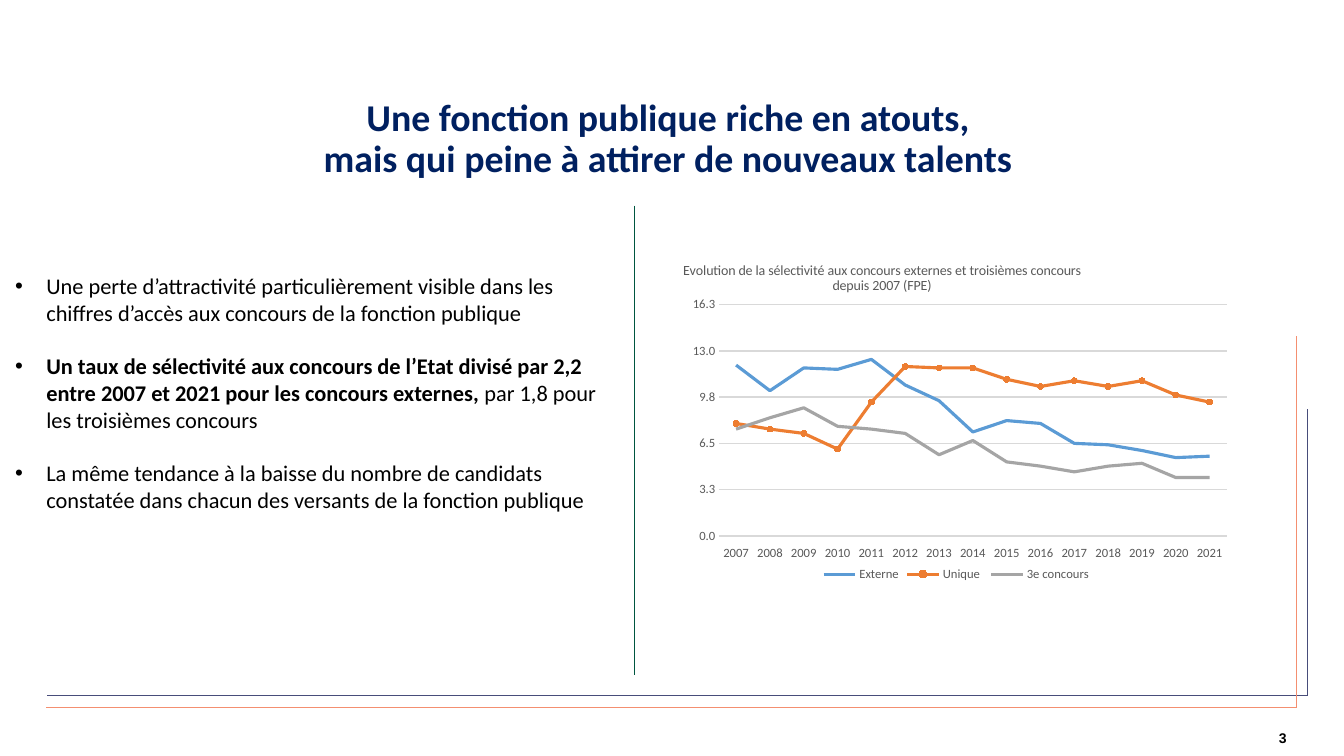
from lxml import etree
from pptx import Presentation
from pptx import util as u
from pptx.chart import data as chart_data
from pptx.dml.color import RGBColor
from pptx.enum import chart as ch
from pptx.enum import shapes, text
from pptx.oxml import ns

NAVY = RGBColor(0x00, 0x20, 0x60)
BLACK = RGBColor(0x00, 0x00, 0x00)
FRAME_BLUE = RGBColor(0x48, 0x4D, 0x7A)
FRAME_CORAL = RGBColor(0xF4, 0x8F, 0x70)
DIVIDER = RGBColor(0x00, 0x56, 0x40)
LABEL_GREY = RGBColor(0x59, 0x59, 0x59)
GRID_GREY = RGBColor(0xD9, 0xD9, 0xD9)
BLUE = RGBColor(0x5B, 0x9B, 0xD5)
ORANGE = RGBColor(0xED, 0x7D, 0x31)
GREY = RGBColor(0xA5, 0xA5, 0xA5)

HEADING = {"name": "Calibri", "size": 27, "bold": True, "color": NAVY}
BODY = {"name": "Calibri", "size": 16, "bold": False, "color": BLACK}
STRONG = {**BODY, "bold": True}
PAGE = {"name": "Arial", "size": 10, "bold": True, "color": BLACK}
CHART_HEADING = {"name": "Calibri", "size": 10, "bold": False, "color": LABEL_GREY}
CHART_LABEL = {**CHART_HEADING, "size": 9}

SELECTIVITY = [
    ("Externe", BLUE,
     [12, 10.2, 11.8, 11.7, 12.4, 10.6, 9.5, 7.3, 8.1, 7.9, 6.5, 6.4, 6, 5.5, 5.6]),
    ("Unique ", ORANGE,
     [7.9, 7.5, 7.2, 6.1, 9.4, 11.9, 11.8, 11.8, 11, 10.5, 10.9, 10.5, 10.9, 9.9, 9.4]),
    ("3e concours", GREY,
     [7.5, 8.3, 9, 7.7, 7.5, 7.2, 5.7, 6.7, 5.2, 4.9, 4.5, 4.9, 5.1, 4.1, 4.1]),
]


class Deck:
    PX = u.Inches(1) // 100

    def __init__(self, width, height):
        self.deck = Presentation()
        self.deck.slide_width, self.deck.slide_height = self.emu(width, height)
        self.slide = self.deck.slides.add_slide(self.deck.slide_layouts[6])

    def emu(self, *lengths):
        return [u.Emu(length * self.PX) for length in lengths]

    def style(self, font, values):
        for key, value in values.items():
            if key == "color":
                font.color.rgb = value
            else:
                setattr(font, key, u.Pt(value) if key == "size" else value)

    def stroke(self, line, color, width):
        line.color.rgb = color
        line.width = u.Pt(width)

    def line(self, start, end, color, width=1):
        rule = self.slide.shapes.add_connector(
            shapes.MSO_CONNECTOR.STRAIGHT, *self.emu(*start, *end))
        self.stroke(rule.line, color, width)
        properties = rule._element.spPr
        etree.SubElement(properties, ns.qn("a:effectLst"))

    def text(self, box, paragraphs, align, anchor, inset=5, spacing=1.0,
             gap=0, bullet_indent=0):
        frame = self.slide.shapes.add_textbox(*self.emu(*box)).text_frame
        margins = {f"margin_{side}": self.emu(inset)[0]
                   for side in ("left", "top", "right", "bottom")}
        settings = {"word_wrap": True, "vertical_anchor": anchor, **margins}
        for key, value in settings.items():
            setattr(frame, key, value)
        for index, runs in enumerate(paragraphs):
            paragraph = frame.add_paragraph() if index else frame.paragraphs[0]
            if bullet_indent:
                self.bullet(paragraph, bullet_indent)
            paragraph.alignment = align
            paragraph.line_spacing = spacing
            if index and gap:
                paragraph.space_before = u.Pt(gap)
            for wording, values in runs:
                run = paragraph.add_run()
                run.text = wording
                self.style(run.font, values)

    def bullet(self, paragraph, indent):
        properties = paragraph._p.get_or_add_pPr()
        hanging = self.emu(indent)[0]
        properties.set("marL", str(hanging))
        properties.set("indent", str(-hanging))
        etree.SubElement(properties, ns.qn("a:buFont"), typeface="Arial")
        etree.SubElement(properties, ns.qn("a:buChar"), char="•")

    def place(self, element, index, **values):
        for former in element.findall(ns.qn("c:layout")):
            element.remove(former)
        layout = etree.Element(ns.qn("c:layout"))
        manual = etree.SubElement(layout, ns.qn("c:manualLayout"))
        for key, value in values.items():
            etree.SubElement(manual, ns.qn(f"c:{key}"), val=str(value))
        element.insert(index, layout)

    def line_chart(self, box, heading, categories, series, top, step):
        data = chart_data.CategoryChartData(number_format="#,##0.0")
        data.categories = categories
        for name, _, values in series:
            data.add_series(name, values)
        chart = self.slide.shapes.add_chart(
            ch.XL_CHART_TYPE.LINE_MARKERS, *self.emu(*box), data).chart
        self.style(chart.font, CHART_LABEL)
        self.chart_heading(chart, heading)
        self.chart_axes(chart, top, step)
        chart.has_legend = True
        chart.legend.position = ch.XL_LEGEND_POSITION.BOTTOM
        chart.legend.include_in_layout = True
        self.style(chart.legend.font, CHART_LABEL)
        plot = chart.plots[0]
        plot.vary_by_categories = False
        for curve, (_, color, _) in zip(plot.series, series):
            curve.smooth = False
            self.stroke(curve.format.line, color, 2.25)
            curve.marker.style = ch.XL_MARKER_STYLE.NONE
        self.place(chart._chartSpace.chart.plotArea, 0,
                   layoutTarget="inner", xMode="edge", yMode="edge",
                   x=0.07, y=0.15, w=0.92, h=0.7)
        return plot

    def chart_heading(self, chart, heading):
        chart.has_title = True
        run = chart.chart_title.text_frame.paragraphs[0].add_run()
        run.text = heading
        self.style(run.font, CHART_HEADING)
        title = chart.chart_title._element
        self.place(title, 1, xMode="edge", yMode="edge", x=0.0, y=0.01)
        title.find(ns.qn("c:overlay")).set("val", "1")

    def chart_axes(self, chart, top, step):
        years, rates = chart.category_axis, chart.value_axis
        for axis in (years, rates):
            axis.major_tick_mark = axis.minor_tick_mark = ch.XL_TICK_MARK.NONE
            self.style(axis.tick_labels.font, CHART_LABEL)
        years.tick_label_position = ch.XL_TICK_LABEL_POSITION.LOW
        self.stroke(years.format.line, GRID_GREY, 1)
        scale = {"minimum_scale": 0, "maximum_scale": top, "major_unit": step,
                 "has_major_gridlines": True}
        for key, value in scale.items():
            setattr(rates, key, value)
        self.stroke(rates.major_gridlines.format.line, GRID_GREY, 1)
        rates.format.line.fill.background()
        rates.tick_labels.number_format = "#,##0.0"
        rates.tick_labels.number_format_is_linked = False

    def mark(self, curve, color, size):
        curve.marker.style = ch.XL_MARKER_STYLE.CIRCLE
        curve.marker.size = size
        curve.marker.format.fill.solid()
        curve.marker.format.fill.fore_color.rgb = color
        self.stroke(curve.marker.format.line, color, 0.75)


def main():
    page = Deck(1333, 750)
    align, anchor = text.PP_ALIGN, text.MSO_ANCHOR

    for left, right, bottom, top, color in (
            (47, 1297, 690, 406, FRAME_BLUE), (46, 1286, 702, 333, FRAME_CORAL)):
        page.line((left, bottom), (right, bottom), color)
        page.line((right, bottom), (right, top), color)

    page.text((1262, 725, 14, 15), [[("3", PAGE)]], align.RIGHT, anchor.MIDDLE, inset=0)
    page.text((25, 92, 1275, 94), [
        [("Une fonction publique riche en atouts,", HEADING)],
        [("mais qui peine à attirer de nouveaux talents", HEADING)],
    ], align.CENTER, anchor.MIDDLE, spacing=0.9)

    selectivity = page.line_chart(
        (675, 253, 547, 328),
        "Evolution de la sélectivité aux concours externes et troisièmes concours "
        "depuis 2007 (FPE)",
        [str(year) for year in range(2007, 2022)], SELECTIVITY, top=16.25, step=3.25)
    page.mark(selectivity.series[1], ORANGE, 4)

    page.line((629, 204), (629, 670), DIVIDER, 0.75)
    page.text((10, 265, 614, 327), [
        [("Une perte d’attractivité particulièrement visible dans les chiffres "
          "d’accès aux concours de la fonction publique", BODY)],
        [("Un taux de sélectivité aux concours de l’Etat divisé par 2,2 entre 2007 "
          "et 2021 pour les concours externes,", STRONG),
         (" par 1,8 pour les troisièmes concours", BODY)],
        [("La même tendance à la baisse du nombre de candidats constatée dans "
          "chacun des versants de la fonction publique", BODY)],
    ], align.LEFT, anchor.TOP, gap=19, bullet_indent=31)

    page.deck.save("out.pptx")


if __name__ == "__main__":
    main()
